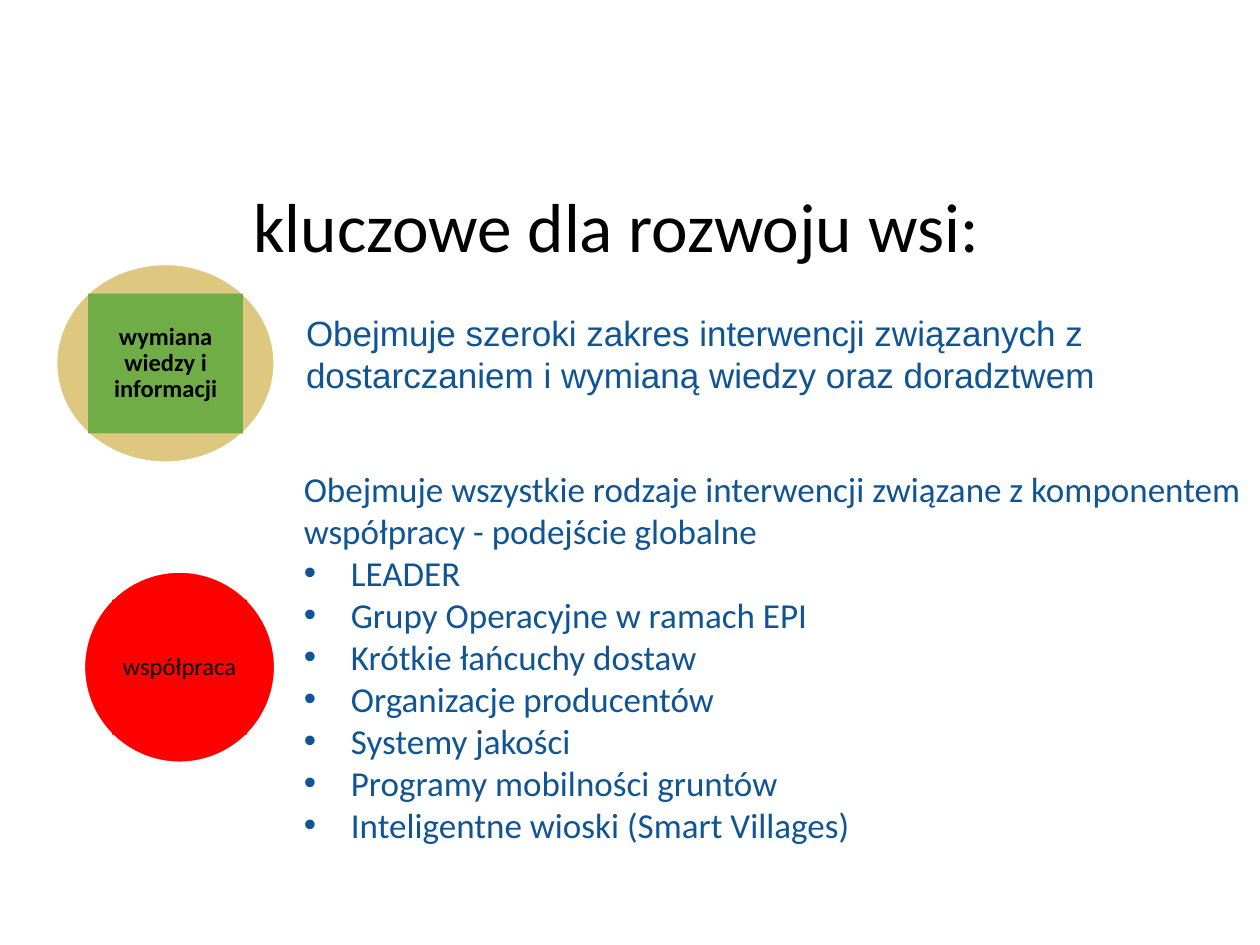
from lxml import etree
from pptx import Presentation
from pptx import util as u
from pptx.dml import color
from pptx.enum import shapes, text
from pptx.oxml import ns

COLORS = {"black": "000000", "blue": "0F5494", "red": "FF0000",
          "gold": "BF9000", "green": "70AD47", "white": "FFFFFF"}
INTRO = "Obejmuje wszystkie rodzaje interwencji związane z komponentem współpracy - podejście globalne"
EXAMPLES = ["LEADER", "Grupy Operacyjne w ramach EPI", "Krótkie łańcuchy dostaw",
            "Organizacje producentów", "Systemy jakości",
            "Programy mobilności gruntów", "Inteligentne wioski (Smart Villages)"]


def rgb(name):
    """Return the named colour."""
    return color.RGBColor.from_string(COLORS[name])


def place(sp, left, top, width, height):
    """Move and size a shape, in centimetres."""
    sp.left, sp.top, sp.width, sp.height = map(u.Cm, (left, top, width, height))


def format_runs(tf, size, name, font="Calibri", bold=False):
    """Format every run of a text frame."""
    for p in tf.paragraphs:
        for r in p.runs:
            r.font.size, r.font.name, r.font.bold = u.Pt(size), font, bold
            r.font.color.rgb = rgb(name)


def set_title(sp):
    """Fill the title placeholder."""
    place(sp, 2.29, 2.26, 22.02, 3.18)
    tf = sp.text_frame
    tf.text = "kluczowe dla rozwoju wsi:"
    tf.auto_size = text.MSO_AUTO_SIZE.NONE
    tf.vertical_anchor = text.MSO_ANCHOR.BOTTOM
    tf.margin_left, tf.margin_bottom = u.Cm(2.82), u.Cm(0.05)
    p = tf.paragraphs[0]
    p.alignment, p.line_spacing = text.PP_ALIGN.LEFT, 0.9
    format_runs(tf, 39.6, "black")


def set_list(sp):
    """Fill the body placeholder with an introduction and its bullets."""
    place(sp, 5.87, 9.3, 19.53, 9.6)
    tf = sp.text_frame
    tf.text = "\n".join([INTRO] + EXAMPLES)
    tf.auto_size = text.MSO_AUTO_SIZE.NONE
    for i, p in enumerate(tf.paragraphs):
        p.space_before = u.Pt(0)
        indent = u.Cm(0.95) if i else 0
        pPr = p._p.get_or_add_pPr()
        pPr.set("marL", str(indent))
        pPr.set("indent", str(-indent))
        if not i:
            etree.SubElement(pPr, ns.qn("a:buNone"))
    format_runs(tf, 20, "blue")


def add_note(s, content):
    """Add the description beside the upper badge."""
    sp = s.shapes.add_textbox(u.Cm(5.92), u.Cm(5.31), u.Cm(18.21), u.Cm(2.82))
    tf = sp.text_frame
    tf.word_wrap = True
    tf.margin_top = u.Cm(0.97)
    tf.text = content
    format_runs(tf, 20, "blue", "Arial")


def add_filled(group, kind, box, fill):
    """Add a filled shape without outline to a group."""
    sp = group.shapes.add_shape(kind, *map(u.Cm, box))
    sp.shadow.inherit = False
    sp.fill.solid()
    sp.fill.fore_color.rgb = rgb(fill)
    sp.line.fill.background()
    return sp


def add_badge(s, label, oval, oval_fill, panel, panel_fill, alpha=100, bold=False):
    """Add an ellipse with a labelled rectangle on it."""
    group = s.shapes.add_group_shape()
    sp = add_filled(group, shapes.MSO_SHAPE.OVAL, oval, oval_fill)
    sp.line.color.rgb = rgb("white")
    sp.line.width = u.Pt(1)
    if alpha < 100:
        clr = sp.fill._xPr.find(".//" + ns.qn("a:srgbClr"))
        etree.SubElement(clr, ns.qn("a:alpha"), val=str(alpha * 1000))
    sp = add_filled(group, shapes.MSO_SHAPE.RECTANGLE, panel, panel_fill)
    tf = sp.text_frame
    tf.word_wrap = True
    tf.vertical_anchor = text.MSO_ANCHOR.MIDDLE
    tf.margin_left = tf.margin_right = tf.margin_top = tf.margin_bottom = u.Cm(0.05)
    tf.text = label
    p = tf.paragraphs[0]
    p.alignment, p.line_spacing = text.PP_ALIGN.CENTER, 0.9
    format_runs(tf, 14, "black", bold=bold)


def main():
    """Build and save the slide."""
    prs = Presentation()
    prs.slide_width, prs.slide_height = u.Cm(25.4), u.Cm(19.05)
    s = prs.slides.add_slide(prs.slide_layouts[1])
    set_title(s.shapes.title)
    set_list(s.placeholders[1])
    add_note(s, "Obejmuje szeroki zakres interwencji związanych z "
                "dostarczaniem i wymianą wiedzy oraz doradztwem")
    add_badge(s, "współpraca", (1.7, 11.53, 3.84, 3.84), "red",
              (2.26, 12.09, 2.72, 2.72), "red")
    add_badge(s, "wymiana wiedzy i informacji", (1.14, 5.33, 4.39, 3.99), "gold",
              (1.78, 5.92, 3.12, 2.82), "green", alpha=50, bold=True)
    prs.save("out.pptx")


if __name__ == "__main__":
    main()
